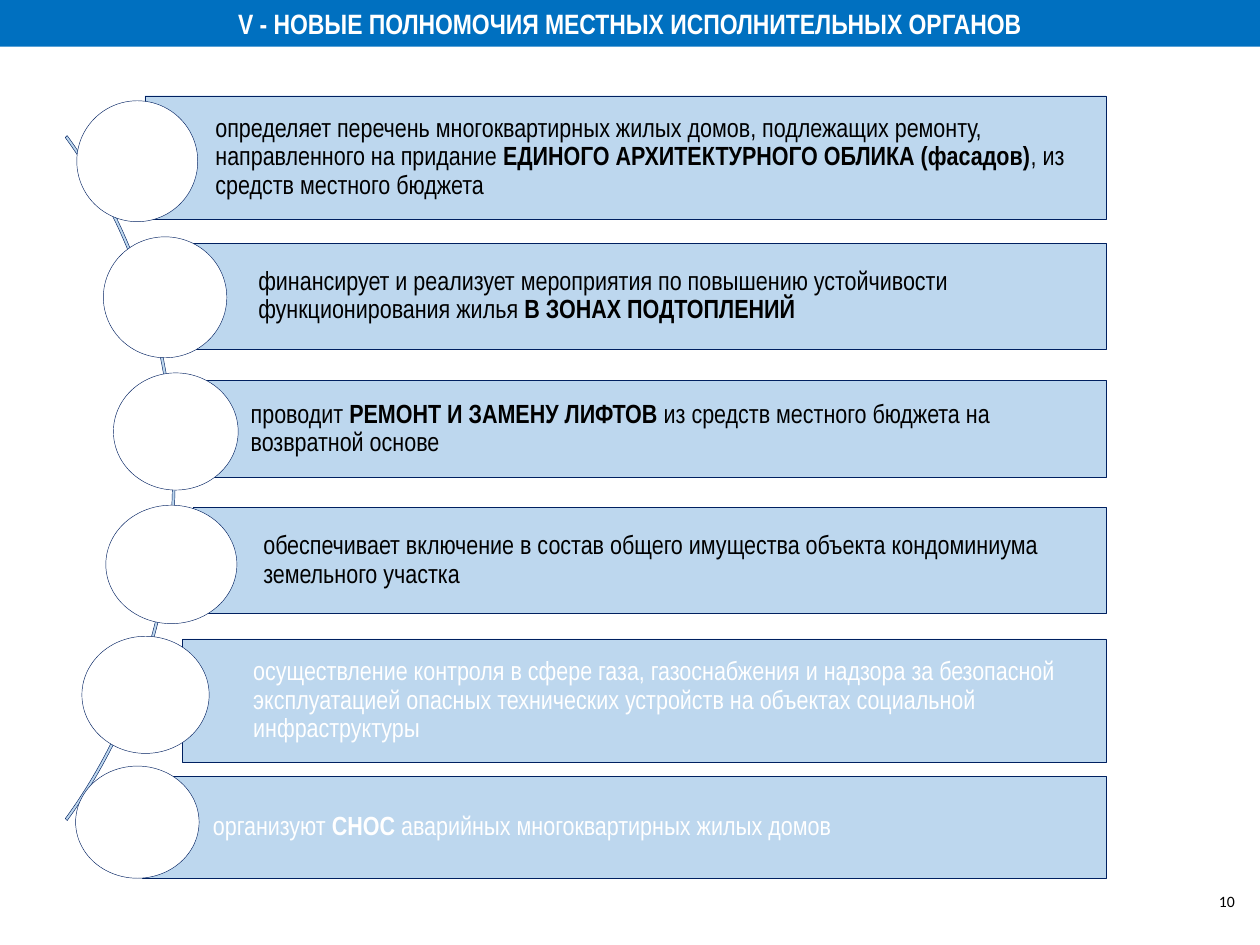
from pptx import Presentation
from pptx.dml.color import RGBColor
from pptx.enum.shapes import MSO_SHAPE
from pptx.enum.text import MSO_ANCHOR, PP_ALIGN
from pptx.util import Inches, Pt

RECT, OVAL, ARC = MSO_SHAPE.RECTANGLE, MSO_SHAPE.OVAL, MSO_SHAPE.BLOCK_ARC
LEFT, MID, RIGHT = PP_ALIGN.LEFT, PP_ALIGN.CENTER, PP_ALIGN.RIGHT
CENTRE = MSO_ANCHOR.MIDDLE

WHITE = RGBColor(0xFF, 0xFF, 0xFF)
BLACK = RGBColor(0, 0, 0)
BLUE = RGBColor(0x00, 0x70, 0xC0)
PALE = RGBColor(0xBD, 0xD7, 0xEE)
NAVY = RGBColor(0x00, 0x20, 0x60)

COLS, ROWS = 100, 75
EDGE = 87.8  # column where all bars end

# bar: left, top, height; disc: left, top, width, height; colour; (text, bold) runs
ITEMS = [
    ((11.5, 7.6, 9.8), (6.1, 8, 9.6, 9.6), BLACK, [
        ("определяет перечень многоквартирных жилых домов, подлежащих ремонту, "
         "направленного на придание ", False),
        ("ЕДИНОГО АРХИТЕКТУРНОГО ОБЛИКА (фасадов)", True),
        (", из средств местного бюджета", False)]),
    ((14.9, 19.3, 8.4), (8.2, 18.8, 9.8, 9.6), BLACK, [
        ("финансирует и реализует мероприятия по повышению устойчивости "
         "функционирования жилья ", False),
        ("В ЗОНАХ ПОДТОПЛЕНИЙ", True)]),
    ((14.3, 30.2, 7.7), (9, 29.6, 9.9, 9.3), BLACK, [
        ("проводит ", False),
        ("РЕМОНТ И ЗАМЕНУ ЛИФТОВ ", True),
        ("из средств местного бюджета на возвратной основе", False)]),
    ((15.3, 40.3, 8.4), (8.4, 40.1, 10.4, 9.4), BLACK, [
        ("обеспечивает включение в состав общего имущества объекта "
         "кондоминиума земельного участка", False)]),
    ((14.5, 50.7, 9.8), (6.5, 50.5, 10.1, 9.3), WHITE, [
        ("осуществление контроля в сфере газа, газоснабжения и надзора за "
         "безопасной эксплуатацией опасных технических устройств на объектах "
         "социальной инфраструктуры", False)]),
    ((11.3, 61.6, 8.1), (6, 60.8, 9.8, 8.9), WHITE, [
        ("организуют ", False),
        ("СНОС", True),
        (" аварийных многоквартирных жилых домов", False)]),
]


class Deck:
    """Style and current slide; boxes are (left, top, width, height) in grid cells."""

    font = "Arial Narrow"

    def __init__(self):
        self.prs = Presentation()
        self.prs.slide_width, self.prs.slide_height = Inches(10), Inches(7.5)
        self.slide = self.prs.slides.add_slide(self.prs.slide_layouts[6])
        fill = self.slide.background.fill
        fill.solid()
        fill.fore_color.rgb = WHITE

    def place(self, box):
        wide, high = self.prs.slide_width / COLS, self.prs.slide_height / ROWS
        return [round(n * unit) for n, unit in zip(box, (wide, high) * 2)]

    def shape(self, kind, box, fill, line=None):
        item = self.slide.shapes.add_shape(kind, *self.place(box))
        item.shadow.inherit = False
        item.fill.solid()
        item.fill.fore_color.rgb = fill
        if line is None:
            item.line.fill.background()
        else:
            item.line.color.rgb = line
            item.line.width = Pt(0.25)
        return item

    def label(self, item, runs, size, color, align, font=None, space=1.0, pads=None):
        """Fill a shape with (text, bold) runs; pads are left, top, right, bottom inches."""
        frame = item.text_frame
        left, top, right, bottom = map(Inches, pads or (0.1, 0.05, 0.1, 0.05))
        look = {"word_wrap": True, "vertical_anchor": CENTRE,
                "margin_left": left, "margin_top": top,
                "margin_right": right, "margin_bottom": bottom}
        for key, val in look.items():
            setattr(frame, key, val)
        para = frame.paragraphs[0]
        para.alignment, para.line_spacing = align, space
        for text, bold in runs:
            run = para.add_run()
            run.text = text
            style = {"name": font or self.font, "size": Pt(size), "bold": bold}
            for key, val in style.items():
                setattr(run.font, key, val)
            run.font.color.rgb = color

    def title(self, text):
        band = self.shape(RECT, (0, 0, COLS, 3.7), BLUE)
        self.label(band, [(text, True)], 16, WHITE, MID)

    def arc(self, box):
        curve = self.shape(ARC, box, PALE, NAVY)
        for i, val in enumerate((189, 27, 0.003)):
            curve.adjustments[i] = val

    def item(self, bar, disc, color, runs):
        left, top, high = bar
        rect = self.shape(RECT, (left, top, EDGE - left, high), PALE, NAVY)
        self.label(rect, runs, 15, color, LEFT, space=0.9,
                   pads=(0.56, 0.04, 0.04, 0.04))
        self.shape(OVAL, disc, WHITE, NAVY)

    def number(self, text):
        box = self.slide.shapes.add_textbox(*self.place((95.5, 69.5, 3.2, 4)))
        self.label(box, [(text, False)], 9, BLACK, RIGHT, font="Calibri",
                   pads=(0.07, 0.04, 0.07, 0.04))


def main():
    deck = Deck()
    deck.title("V - НОВЫЕ ПОЛНОМОЧИЯ МЕСТНЫХ ИСПОЛНИТЕЛЬНЫХ ОРГАНОВ")
    deck.arc((-57.6, -3.9, 71.5, 83.7))
    for row in ITEMS:
        deck.item(*row)
    deck.number("10")
    deck.prs.save("out.pptx")


if __name__ == "__main__":
    main()
